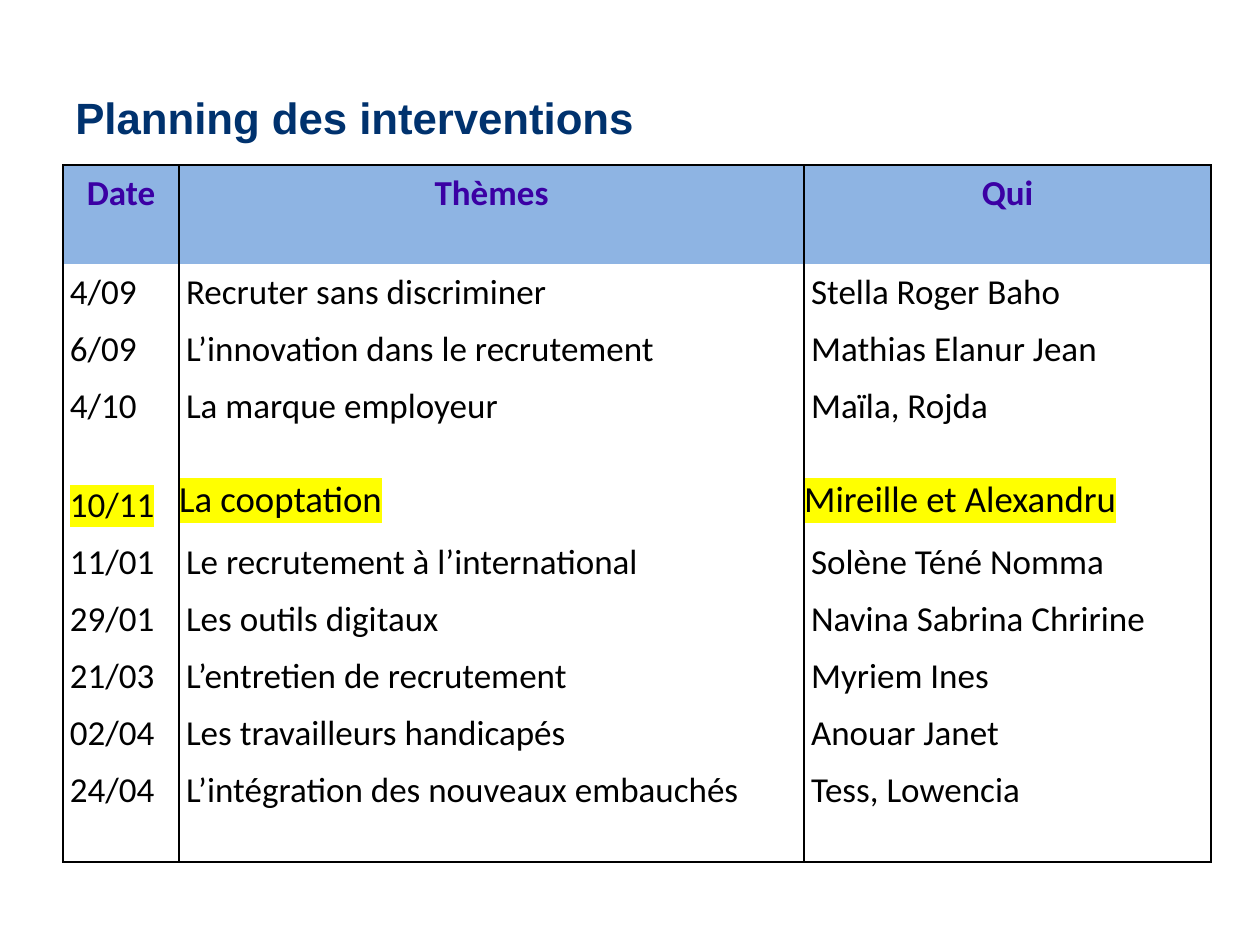
from typing import NamedTuple

from lxml.etree import SubElement
from pptx import Presentation
from pptx.dml.color import RGBColor
from pptx.enum.text import MSO_ANCHOR as Anchor, PP_ALIGN as Align
from pptx.oxml.ns import qn
from pptx.util import Cm, Pt

NAVY = RGBColor(0x00, 0x32, 0x6E)
PURPLE = RGBColor(0x3B, 0x00, 0xA4)
SKY = RGBColor(0x8E, 0xB4, 0xE3)
BLACK = RGBColor(0x00, 0x00, 0x00)
YELLOW = RGBColor(0xFF, 0xFF, 0x00)

COLUMN_WIDTHS = (Cm(2.34), Cm(12.6), Cm(8.2))
ROW_HEIGHT = Cm(1.15)
TALL_ROW_HEIGHT = Cm(2)
CELL_INSET = Cm(0.14)


class Session(NamedTuple):
    date: str
    theme: str
    speakers: str
    tall: bool = False
    highlighted: bool = False


HEADER = Session("Date", "Thèmes", "Qui", tall=True)
SESSIONS = (
    Session("4/09", "Recruter sans discriminer", "Stella Roger Baho"),
    Session("6/09", "L’innovation dans le recrutement", "Mathias Elanur Jean"),
    Session("4/10", "La marque employeur", "Maïla, Rojda", tall=True),
    Session("10/11", "La cooptation", "Mireille et Alexandru", highlighted=True),
    Session("11/01", "Le recrutement à l’international", "Solène Téné Nomma"),
    Session("29/01", "Les outils digitaux", "Navina Sabrina Chririne"),
    Session("21/03", "L’entretien de recrutement", "Myriem Ines"),
    Session("02/04", "Les travailleurs handicapés", "Anouar Janet"),
    Session("24/04", "L’intégration des nouveaux embauchés", "Tess, Lowencia", tall=True),
)


def style_span(span, font_name: str, size: int, color: RGBColor, bold: bool,
               highlighted: bool = False) -> None:
    span.font.size = Pt(size)
    span.font.bold = bold
    span.font.color.rgb = color
    if highlighted:
        highlight = SubElement(span.font._element, qn("a:highlight"))
        SubElement(highlight, qn("a:srgbClr"), val=str(YELLOW))
    span.font.name = font_name


def add_title(page, text: str) -> None:
    box = page.shapes.add_textbox(Cm(1.27), Cm(0.76), Cm(22.86), Cm(3.18))
    frame = box.text_frame
    frame.word_wrap = True
    frame.vertical_anchor = Anchor.MIDDLE
    frame.text = text
    style_span(frame.paragraphs[0].runs[0], "Arial", 25, NAVY, True)


def set_borders(cell, visible: str) -> None:
    properties = cell._tc.get_or_add_tcPr()
    for side in "LRTB":
        line = SubElement(properties, qn(f"a:ln{side}"), w=str(Pt(1)))
        if side in visible:
            fill = SubElement(line, qn("a:solidFill"))
            SubElement(fill, qn("a:srgbClr"), val=str(BLACK))
        else:
            SubElement(line, qn("a:noFill"))


def fill_cell(cell, text: str, is_header: bool, is_last: bool, highlighted: bool,
              flush: bool) -> None:
    inset = Cm(0) if flush else CELL_INSET
    cell.margin_left = cell.margin_right = inset
    cell.margin_top = cell.margin_bottom = inset
    set_borders(cell, "LR" + "T" * is_header + "B" * is_last)
    if is_header:
        cell.fill.solid()
        cell.fill.fore_color.rgb = SKY
    else:
        cell.fill.background()
    cell.text_frame.text = text
    para = cell.text_frame.paragraphs[0]
    para.alignment = Align.CENTER if is_header else Align.LEFT
    style_span(para.runs[0], "Calibri", 21 if flush else 20,
               PURPLE if is_header else BLACK, is_header, highlighted)


def add_schedule(page, sessions: tuple[Session, ...]) -> None:
    heights = [TALL_ROW_HEIGHT if session.tall else ROW_HEIGHT for session in sessions]
    table = page.shapes.add_table(len(sessions), len(COLUMN_WIDTHS), Cm(1.27), Cm(3.33),
                                  sum(COLUMN_WIDTHS), sum(heights)).table
    table.first_row = False
    table.horz_banding = False
    for column, width in zip(table.columns, COLUMN_WIDTHS):
        column.width = width
    for row, height, session in zip(table.rows, heights, sessions):
        row.height = height
        texts = (session.date, session.theme, session.speakers)
        for index, (cell, text) in enumerate(zip(row.cells, texts)):
            fill_cell(cell, text, session is sessions[0], session is sessions[-1],
                      session.highlighted, session.highlighted and index > 0)


def main() -> None:
    deck = Presentation()
    deck.slide_width, deck.slide_height = Cm(25.4), Cm(19.05)
    page = deck.slides.add_slide(deck.slide_layouts[6])
    add_title(page, "Planning des interventions")
    add_schedule(page, (HEADER, *SESSIONS))
    deck.save("out.pptx")


if __name__ == "__main__":
    main()
